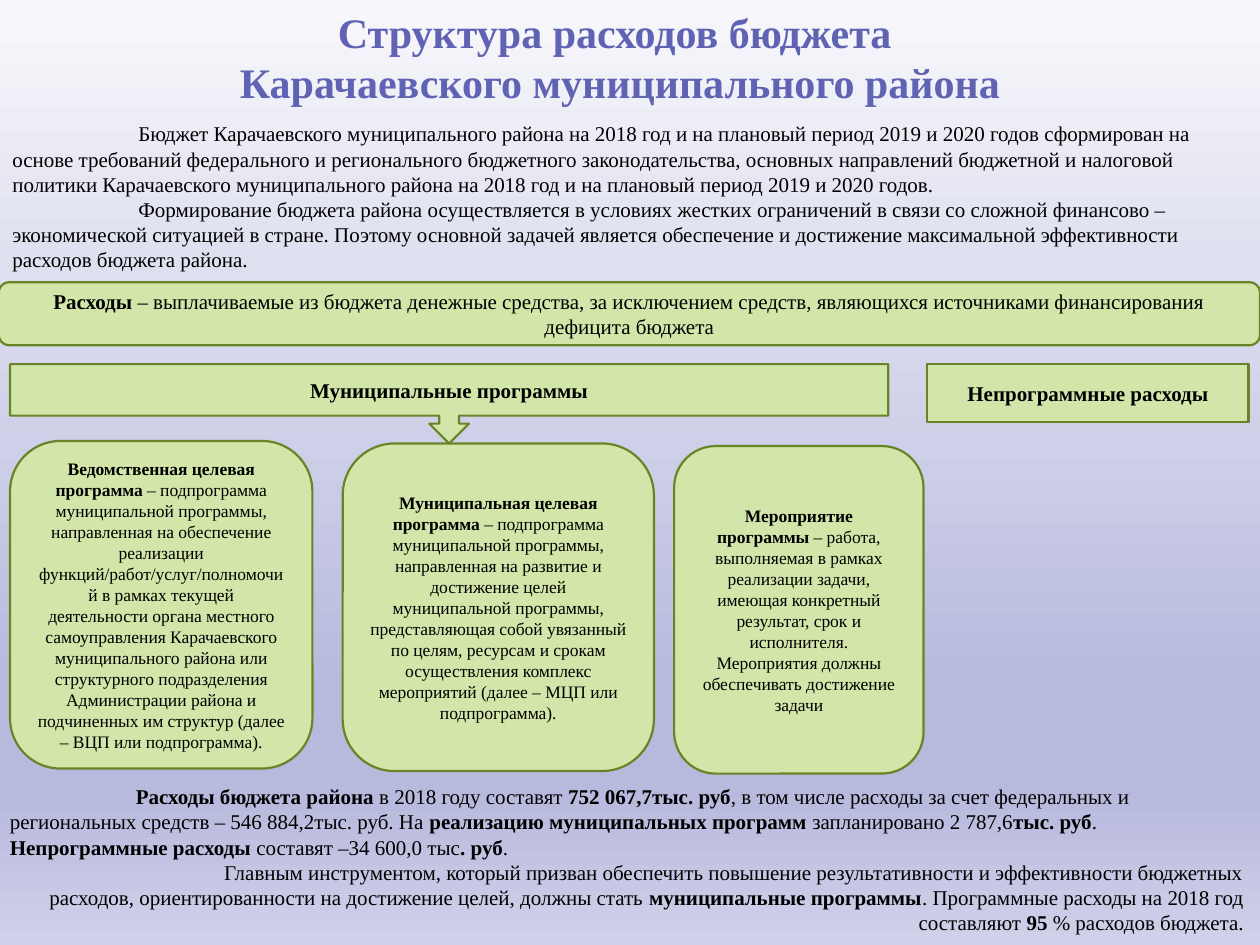
from lxml import etree
from pptx import Presentation
from pptx.dml.color import RGBColor
from pptx.enum.shapes import MSO_SHAPE
from pptx.enum.text import MSO_ANCHOR, MSO_AUTO_SIZE, PP_ALIGN
from pptx.oxml.ns import qn
from pptx.util import Inches, Pt

LEFT, CENTER, RIGHT = PP_ALIGN.LEFT, PP_ALIGN.CENTER, PP_ALIGN.RIGHT
TOP, MIDDLE = MSO_ANCHOR.TOP, MSO_ANCHOR.MIDDLE
ROUNDED, RECT = MSO_SHAPE.ROUNDED_RECTANGLE, MSO_SHAPE.RECTANGLE
CALLOUT = MSO_SHAPE.DOWN_ARROW_CALLOUT
FIT_SHAPE = MSO_AUTO_SIZE.SHAPE_TO_FIT_TEXT

FONT = "Times New Roman"
BLACK, VIOLET, GREEN, OLIVE = "000000", "6063B4", "D2E6A9", "678526"
BACKGROUND = [(0, "F7F7FB"), (74, "B7B9DD"), (83, "B7B9DD"), (100, "CFD0E9")]
INDENT = 1

# Content: a paragraph is (alignment, first-line indent, text); ** switches bold
TITLE = [
    (CENTER, 0, "**Структура расходов бюджета "),
    (CENTER, 0, "**Карачаевского муниципального района"),
]
INTRO = [
    (LEFT, INDENT, "Бюджет Карачаевского муниципального района на 2018 год и на плановый период "
     "2019 и 2020 годов сформирован на основе требований федерального и регионального "
     "бюджетного законодательства, основных направлений бюджетной и налоговой политики "
     "Карачаевского муниципального района на 2018 год и на плановый период 2019 и 2020 годов."),
    (LEFT, INDENT, "Формирование бюджета района осуществляется в условиях жестких ограничений "
     "в связи со сложной финансово – экономической ситуацией в стране. Поэтому основной "
     "задачей является обеспечение и достижение максимальной эффективности расходов "
     "бюджета района."),
]
SUMMARY = [
    (LEFT, INDENT, "**Расходы бюджета района** в 2018 году составят **752 067,7тыс. руб**, в том "
     "числе расходы за счет федеральных и региональных средств – 546 884,2тыс. руб. На "
     "**реализацию муниципальных программ **запланировано 2 787,6**тыс. руб**."),
    (LEFT, 0, "**Непрограммные расходы **составят –34 600,0 тыс**. руб**."),
    (RIGHT, INDENT, "Главным инструментом, который призван обеспечить повышение результативности "
     "и эффективности бюджетных расходов, ориентированности на достижение целей, должны "
     "стать **муниципальные программы**. Программные расходы на 2018 год составляют "
     "**95 **% расходов бюджета."),
]
# Headings: preset, (left, top, width, height), text
HEADINGS = [
    (ROUNDED, (-0.01, 2.24, 10.01, 0.5),
     "**Расходы** – выплачиваемые из бюджета денежные средства, за исключением средств, "
     "являющихся источниками финансирования дефицита бюджета"),
    (CALLOUT, (0.08, 2.89, 6.97, 0.63), "**Муниципальные программы"),
    (RECT, (7.36, 2.89, 2.55, 0.46), "**Непрограммные расходы"),
]
# Programme parts: left, width, text
PROGRAMMES = [
    (0.08, 2.4,
     "**Ведомственная целевая программа **– подпрограмма муниципальной программы, направленная "
     "на обеспечение реализации функций/работ/услуг/полномочий в рамках текущей деятельности "
     "органа местного самоуправления Карачаевского муниципального района или структурного "
     "подразделения Администрации района и подчиненных им структур (далее – ВЦП или "
     "подпрограмма)."),
    (2.72, 2.47,
     "**Муниципальная целевая программа **– подпрограмма муниципальной программы, направленная "
     "на развитие и достижение целей муниципальной программы, представляющая собой увязанный "
     "по целям, ресурсам и срокам осуществления комплекс мероприятий (далее – МЦП или "
     "подпрограмма)."),
    (5.35, 1.98,
     "**Мероприятие программы** – работа, выполняемая в рамках реализации задачи, имеющая "
     "конкретный результат, срок и исполнителя. Мероприятия должны обеспечивать достижение "
     "задачи"),
]
PROGRAMME_TOP, PROGRAMME_STEP, PROGRAMME_HEIGHT = 3.5, 0.02, 2.6


def rgb(code):
    return RGBColor.from_string(code)


def write(shape, paragraphs, size, color=BLACK, **frame_format):
    frame = shape.text_frame
    for name, value in frame_format.items():
        setattr(frame, name, value)
    for number, (alignment, indent, text) in enumerate(paragraphs):
        paragraph = frame.add_paragraph() if number else frame.paragraphs[0]
        paragraph.alignment = alignment
        if indent:
            paragraph._p.get_or_add_pPr().set("indent", str(Inches(indent)))
        for position, part in enumerate(text.split("**")):
            if not part:
                continue
            run = paragraph.add_run()
            run.text = part
            style = {"name": FONT, "size": Pt(size), "bold": position % 2 == 1}
            for name, value in style.items():
                setattr(run.font, name, value)
            run.font.color.rgb = rgb(color)


def add_block(slide, preset, box, text, size):
    block = slide.shapes.add_shape(preset, *map(Inches, box))
    block.shadow.inherit = False
    block.fill.solid()
    block.fill.fore_color.rgb = rgb(GREEN)
    block.line.color.rgb = rgb(OLIVE)
    block.line.width = Pt(1.25)
    write(block, [(CENTER, 0, text)], size, word_wrap=True, vertical_anchor=MIDDLE)


def add_note(slide, box, paragraphs):
    note = slide.shapes.add_textbox(*map(Inches, box))
    write(note, paragraphs, 12, word_wrap=True, auto_size=FIT_SHAPE)


def paint_background(slide):
    fill = slide.background.fill
    fill.gradient()
    fill.gradient_angle = 270
    stops = slide._element.find(".//" + qn("a:gsLst"))
    for stop in list(stops):
        stops.remove(stop)
    for percent, color in BACKGROUND:
        stop = etree.SubElement(stops, qn("a:gs"), pos=str(percent * 1000))
        etree.SubElement(stop, qn("a:srgbClr"), val=color)


def main():
    deck = Presentation()
    deck.slide_width, deck.slide_height = Inches(10), Inches(7.5)
    slide = deck.slides.add_slide(deck.slide_layouts[5])
    paint_background(slide)

    # Title and introduction
    title = slide.shapes.title
    title.left, title.top, title.width, title.height = map(Inches, (1.77, 0, 6.3, 0.91))
    write(title, TITLE, 24, VIOLET, word_wrap=False, auto_size=FIT_SHAPE, vertical_anchor=TOP)
    add_note(slide, (0, 0.91, 10, 1.31), INTRO)

    # Programme parts, each a little lower than the one before
    for number, (left, width, text) in enumerate(PROGRAMMES):
        top = PROGRAMME_TOP + number * PROGRAMME_STEP
        add_block(slide, ROUNDED, (left, top, width, PROGRAMME_HEIGHT), text, 10)

    # Headings of the expenditure structure
    for preset, box, text in HEADINGS:
        add_block(slide, preset, box, text, 12)

    # Summary
    add_note(slide, (-0.02, 6.17, 9.99, 1.31), SUMMARY)
    deck.save("out.pptx")


if __name__ == "__main__":
    main()
